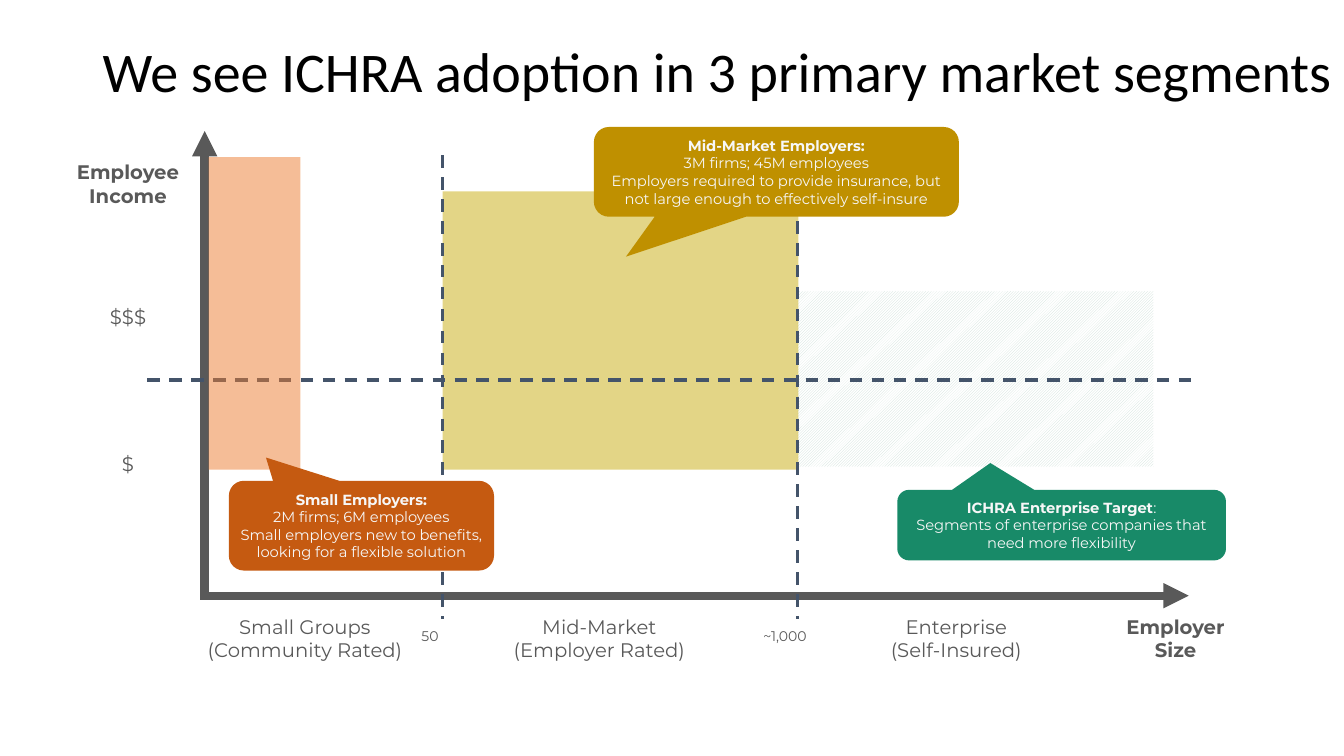
from lxml import etree
from pptx import Presentation
from pptx.dml.color import RGBColor
from pptx.enum.dml import MSO_LINE, MSO_PATTERN
from pptx.enum.shapes import MSO_CONNECTOR, MSO_SHAPE
from pptx.enum.text import MSO_ANCHOR, PP_ALIGN
from pptx.oxml.ns import qn
from pptx.util import Inches, Pt

COLORS = {
    "title": "000000",
    "axis": "595959",
    "divider": "44546A",
    "small": "ED7D31",
    "middle": "C8AD0E",
    "enterprise": "CCE0D8",
    "white": "FFFFFF",
    "callout_text": "F7F7F7",
    "small_callout": "C55A11",
    "middle_callout": "BF9000",
    "enterprise_callout": "188A68",
}
AXIS_LEFT, AXIS_BOTTOM = 2.03, 5.91
MIDDLE_LEFT, ENTERPRISE_LEFT = 4.39, 7.91
SEGMENT_WIDTH = 3.53
LABEL_TOP, LIMIT_TOP = 6.05, 6.18


def rgb(name):
    return RGBColor.from_string(COLORS[name])


def add_span(para, text, size, color, font="Montserrat", bold=False):
    span = para.add_run()
    span.text = text
    span.font.size = Pt(size)
    span.font.name = font
    span.font.bold = bold
    span.font.color.rgb = rgb(color)


def set_margins(frame, margin):
    frame.margin_left = frame.margin_right = Inches(margin)
    frame.margin_top = frame.margin_bottom = Inches(margin)


def next_para(frame, index):
    """Return the frame's first paragraph, or a new one after it."""
    para = frame.add_paragraph() if index else frame.paragraphs[0]
    para.alignment = PP_ALIGN.CENTER
    return para


def add_title(page, text):
    box = page.shapes.add_textbox(Inches(0.92), Inches(0.32), Inches(12.42), Inches(0.83))
    frame = box.text_frame
    frame.word_wrap = True
    frame.margin_right = 0
    frame.vertical_anchor = MSO_ANCHOR.MIDDLE
    frame.paragraphs[0].line_spacing = 0.9
    add_span(frame.paragraphs[0], text, 40, "title", font="Calibri")


def add_label(page, text, left, top, width, height=0.57, size=14, bold=False):
    box = page.shapes.add_textbox(Inches(left), Inches(top), Inches(width), Inches(height))
    frame = box.text_frame
    frame.word_wrap = True
    set_margins(frame, 0.05)
    for index, line in enumerate(text.split("\n")):
        add_span(next_para(frame, index), line, size, "axis", bold=bold)


def add_plain_shape(page, kind, left, top, width, height):
    shape = page.shapes.add_shape(kind, Inches(left), Inches(top), Inches(width), Inches(height))
    shape.shadow.inherit = False
    shape.line.fill.background()
    return shape


def add_segment(page, left, top, width, height, color, hatched=False):
    """Draw a market segment, hatched or half transparent."""
    area = add_plain_shape(page, MSO_SHAPE.RECTANGLE, left, top, width, height)
    if hatched:
        area.fill.patterned()
        area.fill.pattern = MSO_PATTERN.DARK_UPWARD_DIAGONAL
        area.fill.fore_color.rgb = rgb(color)
        area.fill.back_color.rgb = rgb("white")
    else:
        area.fill.solid()
        area.fill.fore_color.rgb = rgb(color)
        tint = area.fill._xPr.find(qn("a:solidFill"))[0]
        etree.SubElement(tint, qn("a:alpha"), val="50000")


def add_line(page, start, end, color, weight, dashed=False, arrow=False):
    points = [Inches(value) for value in (*start, *end)]
    line = page.shapes.add_connector(MSO_CONNECTOR.STRAIGHT, *points)
    line.line.color.rgb = rgb(color)
    line.line.width = Pt(weight)
    if dashed:
        line.line.dash_style = MSO_LINE.DASH
    if arrow:
        etree.SubElement(line.line._get_or_add_ln(), qn("a:tailEnd"), type="triangle")
    etree.SubElement(line._element.spPr, qn("a:effectLst"))


def add_callout(page, place, pointer, color, heading, lines, mark=""):
    """Draw a callout; pointer is its tip relative to the centre, mark a light heading ending."""
    callout = add_plain_shape(page, MSO_SHAPE.ROUNDED_RECTANGULAR_CALLOUT, *place)
    callout.fill.solid()
    callout.fill.fore_color.rgb = rgb(color)
    for index, value in enumerate((*pointer, 0.167)):
        callout.adjustments[index] = value
    frame = callout.text_frame
    frame.word_wrap = True
    frame.vertical_anchor = MSO_ANCHOR.MIDDLE
    set_margins(frame, 0.05)
    para = next_para(frame, 0)
    add_span(para, heading, 10.5, "callout_text", bold=True)
    if mark:
        add_span(para, mark, 10.5, "callout_text")
    for index, line in enumerate(lines, 1):
        add_span(next_para(frame, index), line, 10.5, "callout_text")


def add_chart_area(page):
    add_segment(page, ENTERPRISE_LEFT, 2.89, SEGMENT_WIDTH, 1.74, "enterprise", hatched=True)
    add_segment(page, MIDDLE_LEFT, 1.9, SEGMENT_WIDTH, 2.76, "middle")
    add_line(page, (AXIS_LEFT, AXIS_BOTTOM), (11.79, AXIS_BOTTOM), "axis", 6, arrow=True)
    add_line(page, (AXIS_LEFT, 5.95), (AXIS_LEFT, 1.3), "axis", 6, arrow=True)
    add_line(page, (1.46, 3.77), (11.87, 3.77), "divider", 2.25, dashed=True)
    for x in (MIDDLE_LEFT, ENTERPRISE_LEFT):
        add_line(page, (x, 1.54), (x, 6.14), "divider", 2.25, dashed=True)
    add_segment(page, 2.07, 1.56, 0.91, 3.1, "small")


def add_labels(page):
    add_label(page, "Employee Income", 0.69, 1.54, 1.16, bold=True)
    add_label(page, "Employer Size", 11.08, LABEL_TOP, 1.16, bold=True)
    for text, top in (("$$$", 2.98), ("$", 4.43)):
        add_label(page, text, 0.69, top, 1.16, 0.34)
    for text, left, width in (
        ("Small Groups\n(Community Rated)", 1.84, 2.37),
        ("Enterprise\n(Self-Insured)", 8.13, 2.71),
        ("Mid-Market\n(Employer Rated)", 4.18, SEGMENT_WIDTH),
    ):
        add_label(page, text, left, LABEL_TOP, width)
    for text, left, width in (("50", 3.89, 0.75), ("~1,000", 7.24, 1.09)):
        add_label(page, text, left, LIMIT_TOP, width, 0.27, size=10)


def add_callouts(page):
    add_callout(
        page, (5.89, 1.26, 3.62, 0.89), (-0.412, 0.945), "middle_callout",
        "Mid-Market Employers:",
        ["3M firms; 45M employees",
         "Employers required to provide insurance, but not large enough to effectively self-insure"],
    )
    add_callout(
        page, (8.9, 4.86, 3.26, 0.7), (-0.217, -0.88), "enterprise_callout",
        "ICHRA Enterprise Target",
        ["Segments of enterprise companies that need more flexibility"],
        mark=":",
    )
    add_callout(
        page, (2.27, 4.77, 2.63, 0.89), (-0.36, -0.76), "small_callout",
        "Small Employers:",
        ["2M firms; 6M employees",
         "Small employers new to benefits, looking for a flexible solution"],
    )


def main():
    deck = Presentation()
    deck.slide_width, deck.slide_height = Inches(13.33), Inches(7.5)
    page = deck.slides.add_slide(deck.slide_layouts[6])
    add_title(page, "We see ICHRA adoption in 3 primary market segments")
    add_chart_area(page)
    add_labels(page)
    add_callouts(page)
    deck.save("out.pptx")


if __name__ == "__main__":
    main()
